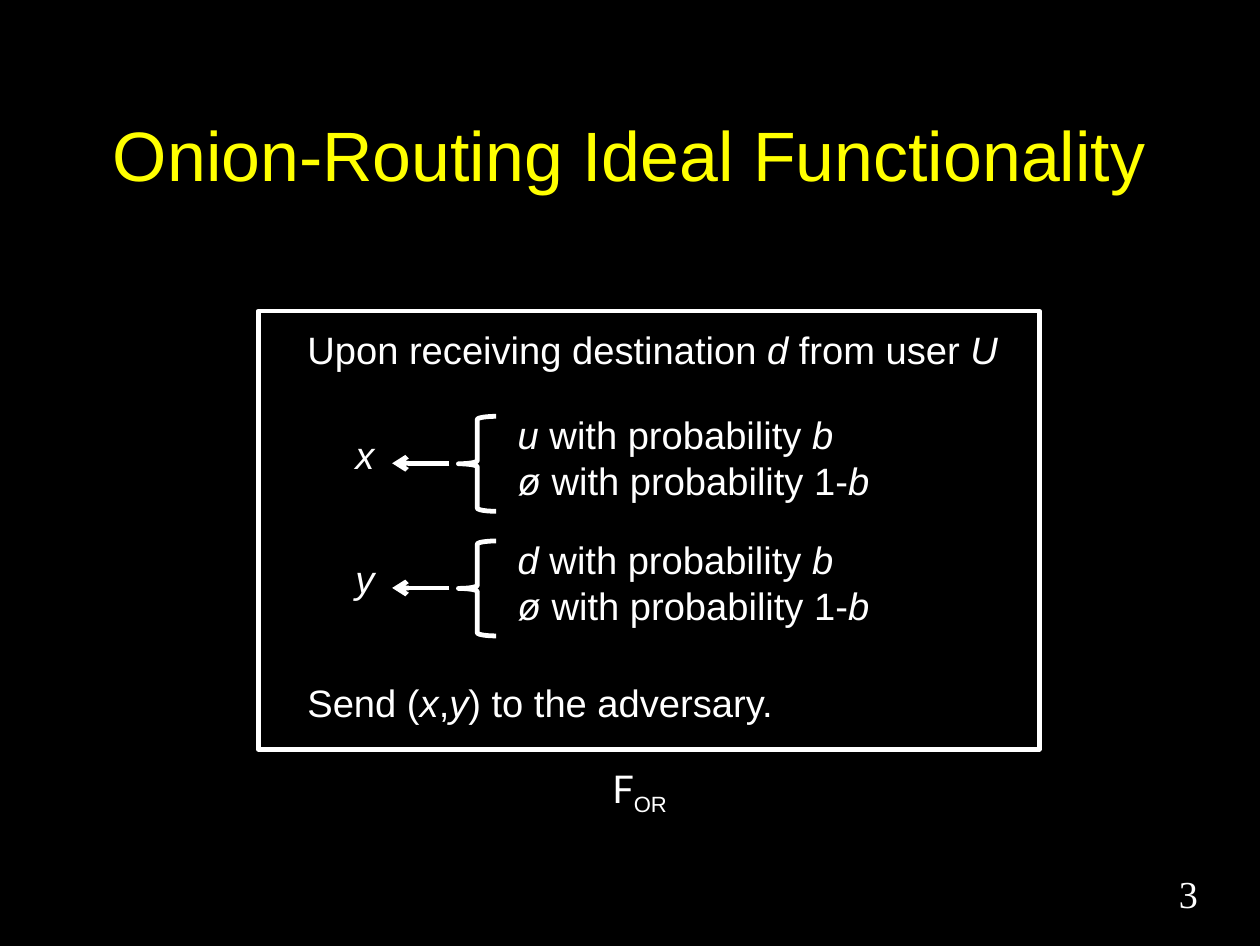
from dataclasses import dataclass

from lxml import etree
from pptx import Presentation
from pptx.dml.color import RGBColor
from pptx.enum.shapes import MSO_CONNECTOR, MSO_SHAPE
from pptx.enum.text import MSO_ANCHOR, PP_ALIGN
from pptx.oxml.ns import qn
from pptx.util import Inches, Pt

STRAIGHT = MSO_CONNECTOR.STRAIGHT
RECTANGLE = MSO_SHAPE.RECTANGLE
LEFT_BRACE = MSO_SHAPE.LEFT_BRACE
TOP = MSO_ANCHOR.TOP
MIDDLE = MSO_ANCHOR.MIDDLE
LEFT = PP_ALIGN.LEFT
CENTER = PP_ALIGN.CENTER


@dataclass(frozen=True)
class Theme:
    """Colours, fonts and sizes of the slide."""
    background: RGBColor = RGBColor(0, 0, 0)
    title: RGBColor = RGBColor(255, 255, 0)
    ink: RGBColor = RGBColor(255, 255, 255)
    font: str = "Arial"
    symbol_font: str = "Lato"
    number_font: str = "Times New Roman"
    title_size: int = 44
    body_size: int = 24
    line_width: int = 3


class SlideBuilder:
    """Draws styled elements on the current slide."""

    def __init__(self, slide, theme):
        self.slide = slide
        self.theme = theme
        slide.background.fill.solid()
        slide.background.fill.fore_color.rgb = theme.background

    def style(self, run, font=None, size=None, color=None):
        run.font.name = font or self.theme.font
        run.font.size = Pt(size or self.theme.body_size)
        run.font.color.rgb = color or self.theme.ink

    def text(self, box, lines, align=LEFT, anchor=TOP, inset=True, spacing=None, **style):
        shape = self.slide.shapes.add_textbox(*map(Inches, box))
        frame = shape.text_frame
        frame.word_wrap = True
        frame.vertical_anchor = anchor
        if not inset:
            frame.margin_left = frame.margin_right = 0
            frame.margin_top = frame.margin_bottom = 0
        for index, line in enumerate(lines):
            paragraph = frame.add_paragraph() if index else frame.paragraphs[0]
            paragraph.alignment = align
            paragraph.line_spacing = spacing
            for position, part in enumerate(line.split("*")):
                if part:
                    run = paragraph.add_run()
                    run.text = part
                    self.style(run, **style)
                    run.font.italic = position % 2 == 1
        return frame.paragraphs[0]

    def subscript(self, paragraph, text):
        run = paragraph.add_run()
        run.text = text
        self.style(run)
        run.font._element.set("baseline", "-25000")

    def outline(self, kind, box):
        shape = self.slide.shapes.add_shape(kind, *map(Inches, box))
        shape.shadow.inherit = False
        shape.fill.background()
        shape.line.color.rgb = self.theme.ink
        shape.line.width = Pt(self.theme.line_width)

    def arrow(self, start, end, height):
        connector = self.slide.shapes.add_connector(
            STRAIGHT, Inches(start), Inches(height), Inches(end), Inches(height))
        connector.line.color.rgb = self.theme.ink
        connector.line.width = Pt(self.theme.line_width)
        properties = connector._element.spPr
        etree.SubElement(properties.find(qn("a:ln")), qn("a:tailEnd"), type="arrow")
        etree.SubElement(properties, qn("a:effectLst"))

    def assignment(self, top, variable, value):
        self.text((4.43, top, 4.5, 0.91),
                  [f"*{value}* with probability *b*", "*ø* with probability 1-*b*"])
        self.arrow(3.93, 3.43, top + 0.5)
        self.outline(LEFT_BRACE, (4.01, top + 0.09, 0.33, 0.83))
        self.text((3.01, top + 0.17, 0.42, 0.5), [f"*{variable}*"])


def main():
    theme = Theme()
    presentation = Presentation()
    presentation.slide_width = Inches(11.02)
    presentation.slide_height = Inches(8.27)
    slide = presentation.slides.add_slide(presentation.slide_layouts[6])
    builder = SlideBuilder(slide, theme)

    builder.text((0.81, 0.69, 9.4, 1.37), ["Onion-Routing Ideal Functionality"],
                 CENTER, MIDDLE, inset=False, spacing=0.95,
                 size=theme.title_size, color=theme.title)
    builder.outline(RECTANGLE, (2.26, 2.72, 6.83, 3.83))
    builder.text((2.59, 2.8, 6.5, 0.5), ["Upon receiving destination *d* from user *U*"])
    for index, (variable, value) in enumerate([("x", "u"), ("y", "d")]):
        builder.assignment(3.55 + index * 1.09, variable, value)
    builder.text((2.59, 5.89, 6.92, 0.5), ["Send (*x*,*y*) to the adversary."])
    name = builder.text((4.76, 6.64, 1.67, 0.5), ["F"], CENTER, font=theme.symbol_font)
    builder.subscript(name, "OR")
    builder.text((10.31, 7.64, 0.39, 0.38), ["3"], inset=False, spacing=0.94,
                 font=theme.number_font)

    presentation.save("out.pptx")


if __name__ == "__main__":
    main()
